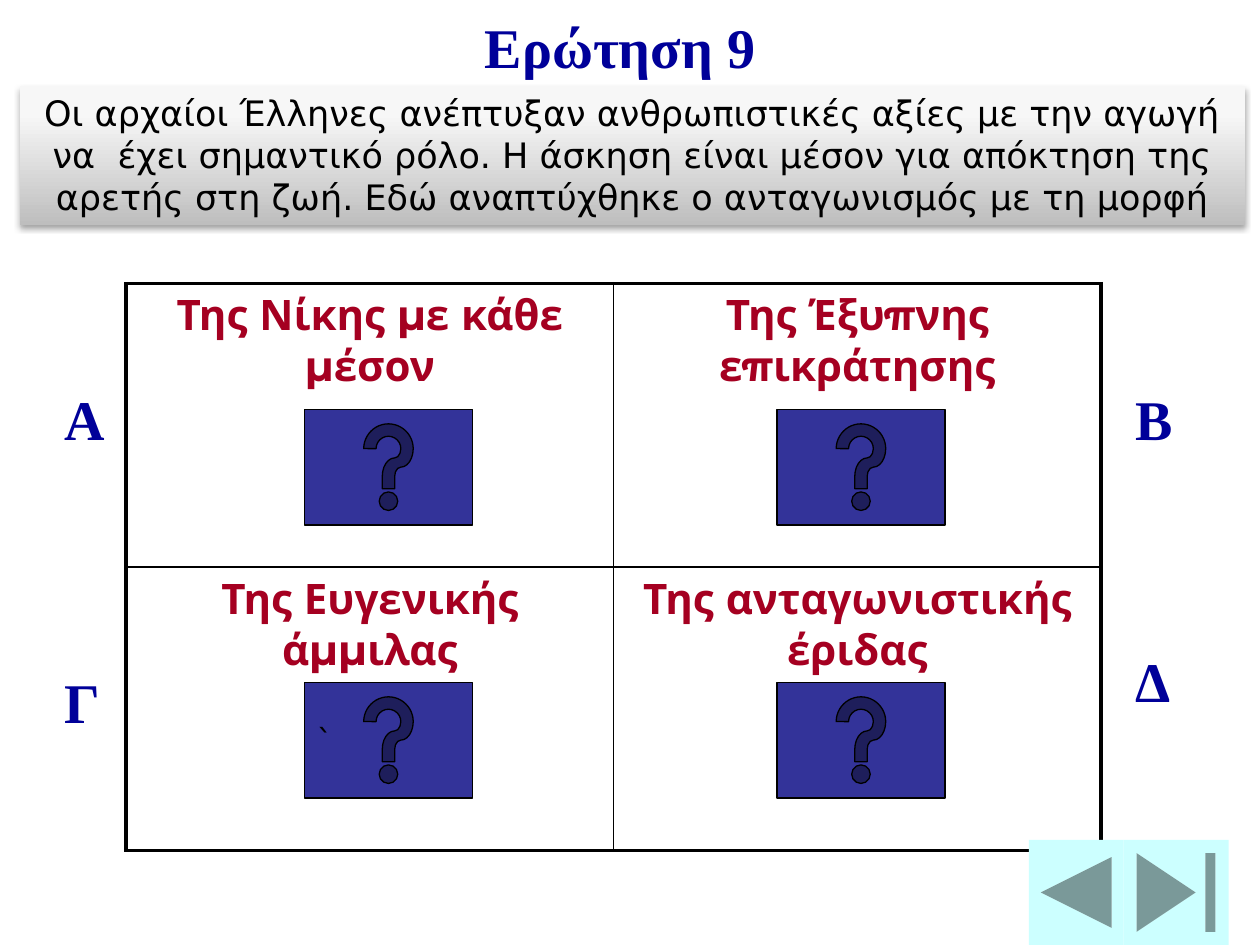
import pptx
import pptx.dml.color
import pptx.enum.shapes
import pptx.enum.text
import pptx.oxml
import pptx.oxml.ns
import pptx.util

UNIT = 1 / 12
SHAPE = pptx.enum.shapes.MSO_SHAPE
ALIGN = pptx.enum.text.PP_ALIGN
ANCHOR = pptx.enum.text.MSO_ANCHOR
NS = pptx.oxml.ns.nsdecls("a")
TITLE = "Ερώτηση 9"
QUESTION = (
    "Οι αρχαίοι Έλληνες ανέπτυξαν ανθρωπιστικές αξίες με την αγωγή "
    "να  έχει σημαντικό ρόλο. Η άσκηση είναι μέσον για απόκτηση της "
    "αρετής στη ζωή. Εδώ αναπτύχθηκε ο ανταγωνισμός με τη μορφή"
)
ANSWERS = [
    ["Της Νίκης με κάθε μέσον", "Της Έξυπνης επικράτησης"],
    ["Της Ευγενικής άμμιλας", "Της ανταγωνιστικής έριδας"],
]
LETTERS = [("Α", 5, 36), ("Γ", 5, 63), ("Β", 107, 36), ("Δ", 107, 61)]


def rgb(value):
    """Return the colour for a hex string."""
    return pptx.dml.color.RGBColor.from_string(value)


def grid(*cells):
    """Turn counts of grid units into lengths."""
    return [pptx.util.Inches(n * UNIT) for n in cells]


def write(tf, text, size, font, color, bold=False, align=ALIGN.LEFT):
    """Write one styled paragraph into a text frame."""
    p = tf.paragraphs[0]
    p.text, p.alignment = text, align
    p.font.size, p.font.name, p.font.bold = pptx.util.Pt(size), font, bold
    p.font.color.rgb = rgb(color)


def add_heading(s, box, text):
    """Add a title or answer letter."""
    tf = s.shapes.add_textbox(*grid(*box)).text_frame
    tf.word_wrap = True
    write(tf, text, 32, "Times New Roman", "000099", True)


def add_shape(s, kind, box, fill=None, line=None):
    """Add a flat preset shape."""
    sp = s.shapes.add_shape(kind, *grid(*box))
    sp.shadow.inherit = False
    if fill:
        sp.fill.solid()
        sp.fill.fore_color.rgb = rgb(fill)
    if line:
        sp.line.color.rgb = rgb(line)
        sp.line.width = pptx.util.Pt(0.75)
    else:
        sp.line.fill.background()
    return sp


def add_border(cell, side, width):
    """Draw one black border of a table cell."""
    cell._tc.get_or_add_tcPr().append(pptx.oxml.parse_xml(
        f'<a:ln{side} {NS} w="{pptx.util.Pt(width)}"><a:solidFill>'
        f'<a:srgbClr val="000000"/></a:solidFill></a:ln{side}>'))


def add_answers(s, box):
    """Add the answer table with a heavy outer frame."""
    table = s.shapes.add_table(2, 2, *grid(*box)).table
    table.first_row = table.horz_banding = False
    for i, row in enumerate(ANSWERS):
        for j, text in enumerate(row):
            cell = table.cell(i, j)
            for side, outer in (("L", j == 0), ("R", j == 1), ("T", i == 0), ("B", i == 1)):
                add_border(cell, side, 2.25 if outer else 1)
            cell.fill.solid()
            cell.fill.fore_color.rgb = rgb("FFFFFF")
            write(cell.text_frame, text, 24, "Montserrat", "A50021", True, ALIGN.CENTER)


def add_help_buttons(s, left, top, x_step, y_step):
    """Add a help button to each answer."""
    for i in range(2):
        for j in range(2):
            box = (left + j * x_step, top + i * y_step, 16, 11)
            sp = add_shape(s, SHAPE.ACTION_BUTTON_HELP, box, "333399", "000000")
            if (i, j) == (1, 0):
                tf = sp.text_frame
                tf.word_wrap, tf.vertical_anchor = False, ANCHOR.MIDDLE
                write(tf, "`", 18, "DejaVu Sans", "000000")


def add_question(s, box):
    """Add the question band with its gradient and soft shadow."""
    sp = add_shape(s, SHAPE.RECTANGLE, box)
    sp.fill.gradient()
    sp.fill.gradient_angle = 90
    stops = sp._element.spPr.find(".//" + pptx.oxml.ns.qn("a:gsLst"))
    stops.clear()
    for share, color in ((0, "BEBEBE"), (80, "F7F7F7"), (100, "F8F8F8")):
        stops.append(pptx.oxml.parse_xml(
            f'<a:gs {NS} pos="{share * 1000}"><a:srgbClr val="{color}"/></a:gs>'))
    effects = sp._element.spPr.find(pptx.oxml.ns.qn("a:effectLst"))
    effects.append(pptx.oxml.parse_xml(
        f'<a:outerShdw {NS} blurRad="{pptx.util.Pt(3.1)}" dist="{pptx.util.Pt(1.8)}" '
        'dir="5400000" rotWithShape="0"><a:srgbClr val="000000">'
        '<a:alpha val="35000"/></a:srgbClr></a:outerShdw>'))
    tf = sp.text_frame
    tf.word_wrap, tf.vertical_anchor = True, ANCHOR.TOP
    write(tf, QUESTION, 20, "DejaVu Sans", "000000", align=ALIGN.CENTER)


def add_navigation(s, left, top, height):
    """Add the back and end buttons side by side."""
    add_shape(s, SHAPE.ACTION_BUTTON_END, (left + 9, top, 10, height), "CCFFFF")
    add_shape(s, SHAPE.ACTION_BUTTON_BACK_OR_PREVIOUS, (left, top, 9, height), "CCFFFF")


def main():
    """Build and save the quiz slide."""
    prs = pptx.Presentation()
    prs.slide_width, prs.slide_height = grid(120, 90)
    s = prs.slides.add_slide(prs.slide_layouts[6])
    add_answers(s, (12, 27, 92.88, 54))
    for letter, left, top in LETTERS:
        add_heading(s, (left, top, 6, 7.5), letter)
    add_heading(s, (45, 0.6, 32, 7.5), TITLE)
    add_help_buttons(s, 29, 39, 45, 26)
    add_navigation(s, 98, 80, 10)
    add_question(s, (1.92, 8.16, 116.64, 13.32))
    prs.save("out.pptx")


if __name__ == "__main__":
    main()
